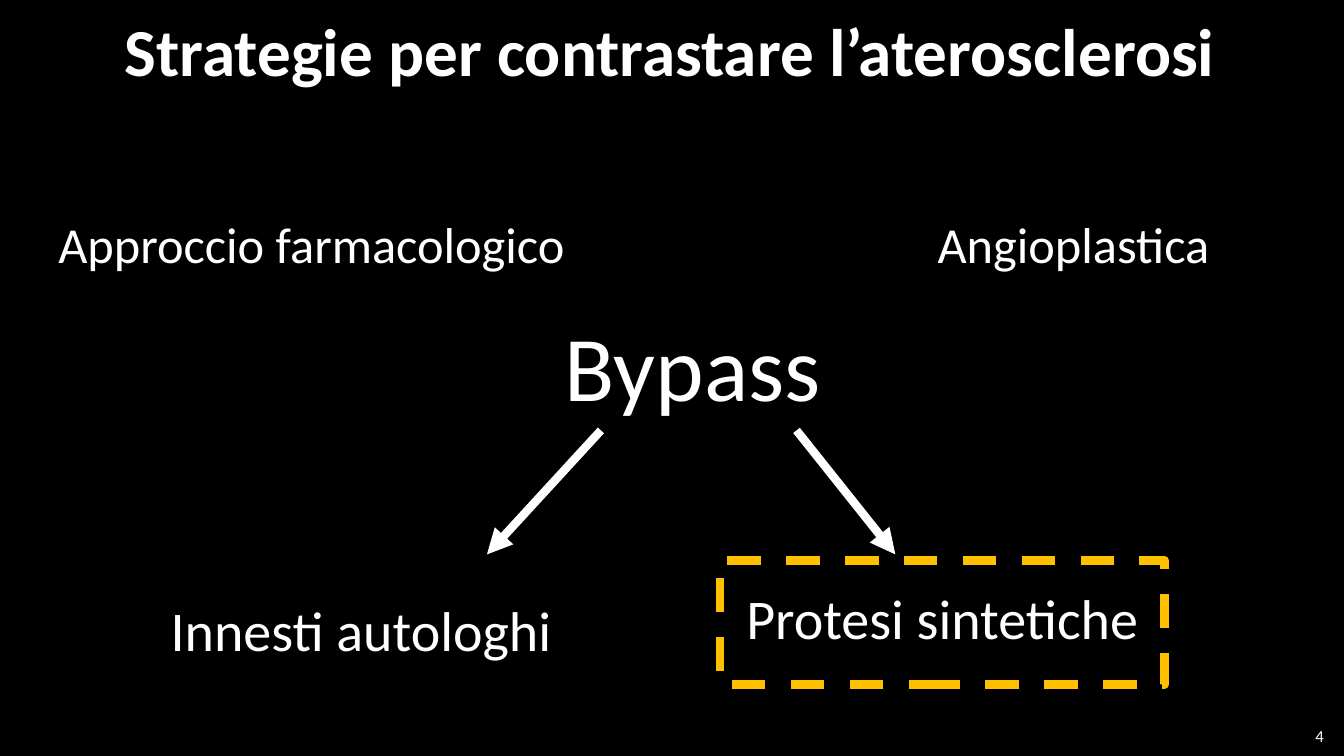
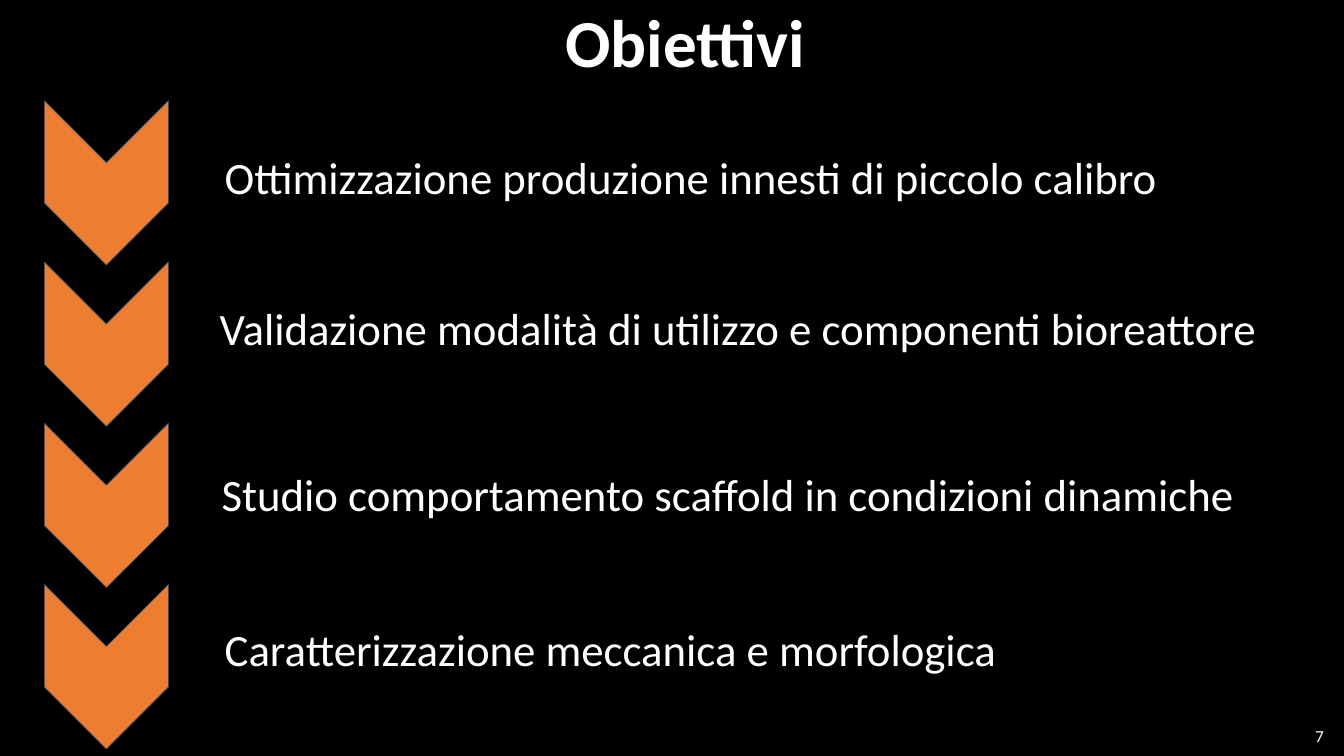
from dataclasses import dataclass

from lxml.etree import SubElement
from pptx import Presentation
from pptx.dml.color import RGBColor
from pptx.enum.dml import MSO_LINE
from pptx.enum.shapes import MSO_CONNECTOR, MSO_SHAPE
from pptx.enum.text import MSO_ANCHOR, MSO_AUTO_SIZE, PP_ALIGN
from pptx.oxml.ns import qn
from pptx.presentation import Presentation as Deck
from pptx.slide import Slide
from pptx.util import Inches, Pt

FONT = "Calibri"
BLACK = "000000"
WHITE = "FFFFFF"
AMBER = "FFC000"
ORANGE = "ED7D31"
SLATE = "44546A"


@dataclass(frozen=True)
class Area:
    left: float
    top: float
    width: float
    height: float

    def lengths(self) -> tuple[int, int, int, int]:
        return (Inches(self.left), Inches(self.top),
                Inches(self.width), Inches(self.height))


@dataclass(frozen=True)
class Label:
    text: str
    area: Area
    size: int
    bold: bool = False
    align: PP_ALIGN = PP_ALIGN.LEFT
    anchor: MSO_ANCHOR = MSO_ANCHOR.TOP
    line_spacing: float = 0.9
    wrap: bool = True


@dataclass(frozen=True)
class Arrow:
    start: tuple[float, float]
    end: tuple[float, float]


def rgb(color: str) -> RGBColor:
    return RGBColor.from_string(color)


def add_label(slide: Slide, label: Label) -> None:
    frame = slide.shapes.add_textbox(*label.area.lengths()).text_frame
    frame.word_wrap = label.wrap
    frame.auto_size = MSO_AUTO_SIZE.NONE if label.wrap else MSO_AUTO_SIZE.SHAPE_TO_FIT_TEXT
    frame.vertical_anchor = label.anchor
    frame.text = label.text
    para = frame.paragraphs[0]
    para.alignment = label.align
    para.line_spacing = label.line_spacing
    font = para.runs[0].font
    font.name = FONT
    font.size = Pt(label.size)
    font.bold = label.bold
    font.color.rgb = rgb(WHITE)


def add_arrow(slide: Slide, arrow: Arrow) -> None:
    points = [Inches(value) for value in (*arrow.start, *arrow.end)]
    connector = slide.shapes.add_connector(MSO_CONNECTOR.STRAIGHT, *points)
    connector.line.color.rgb = rgb(WHITE)
    connector.line.width = Pt(6)
    SubElement(connector.line._get_or_add_ln(), qn("a:tailEnd"), type="triangle")
    SubElement(connector._element.spPr, qn("a:effectLst"))


def add_dashed_frame(slide: Slide, area: Area) -> None:
    frame = slide.shapes.add_shape(MSO_SHAPE.RECTANGLE, *area.lengths())
    frame.shadow.inherit = False
    frame.fill.background()
    frame.line.color.rgb = rgb(AMBER)
    frame.line.width = Pt(6)
    frame.line.dash_style = MSO_LINE.DASH


def add_down_chevron(slide: Slide, area: Area) -> None:
    chevron = slide.shapes.add_shape(MSO_SHAPE.CHEVRON, *area.lengths())
    chevron.rotation = 90
    chevron.shadow.inherit = False
    chevron.fill.solid()
    chevron.fill.fore_color.rgb = rgb(ORANGE)
    chevron.line.color.rgb = rgb(SLATE)
    chevron.line.width = Pt(0.5)


def add_page(deck: Deck, title: str, title_area: Area, number: int) -> Slide:
    """Add a blank slide with its title and page number."""
    page = deck.slides.add_slide(deck.slide_layouts[6])
    add_label(page, Label(title, title_area, 48, bold=True, anchor=MSO_ANCHOR.MIDDLE))
    add_label(page, Label(str(number), Area(10.23, 7.1, 3, 0.4), 12,
                          align=PP_ALIGN.RIGHT, anchor=MSO_ANCHOR.MIDDLE, line_spacing=1))
    return page


def add_strategies(deck: Deck) -> None:
    page = add_page(deck, "Strategie per contrastare l’aterosclerosi",
                    Area(1.14, -0.18, 11.06, 1.45), 4)
    approaches = [
        Label("Approccio farmacologico", Area(0.48, 2.13, 5.37, 0.56), 36),
        Label("Angioplastica", Area(9.2, 2.13, 2.99, 0.56), 36),
        Label("Bypass", Area(5.5, 3.14, 2.79, 1.05), 66),
    ]
    grafts = [
        Label(text, area, 40, align=PP_ALIGN.CENTER, line_spacing=1, wrap=False)
        for text, area in (
            ("Innesti autologhi", Area(1.57, 5.86, 4.02, 0.77)),
            ("Protesi sintetiche", Area(7.28, 5.74, 4.13, 0.77)),
        )
    ]
    for label in approaches + grafts:
        add_label(page, label)
    for arrow in (Arrow((5.96, 4.27), (4.83, 5.5)), Arrow((7.9, 4.27), (8.88, 5.5))):
        add_arrow(page, arrow)
    add_dashed_frame(page, Area(7.14, 5.56, 4.41, 1.23))


def add_goals(deck: Deck) -> None:
    page = add_page(deck, "Obiettivi", Area(5.51, -0.27, 3.79, 1.45), 7)
    goals = [
        Label("Ottimizzazione produzione innesti di piccolo calibro",
              Area(2.13, 1.5, 9.53, 0.45), 32),
        Label("Validazione modalità di utilizzo e componenti bioreattore",
              Area(2.08, 2.99, 10.97, 0.45), 32),
        Label("Studio comportamento scaffold in condizioni dinamiche",
              Area(2.1, 4.64, 10.97, 0.8), 32),
        Label("Caratterizzazione meccanica e morfologica",
              Area(2.13, 6.18, 8.4, 0.54), 32),
    ]
    first_top, pitch = 1.2, 1.6
    for index, goal in enumerate(goals):
        add_down_chevron(page, Area(0.24, first_top + index * pitch, 1.63, 1.23))
        add_label(page, goal)


def main() -> None:
    deck = Presentation()
    deck.slide_width = Inches(13.33)
    deck.slide_height = Inches(7.5)
    background = deck.slide_master.background.fill
    background.solid()
    background.fore_color.rgb = rgb(BLACK)
    add_strategies(deck)
    add_goals(deck)
    deck.save("out.pptx")


if __name__ == "__main__":
    main()
